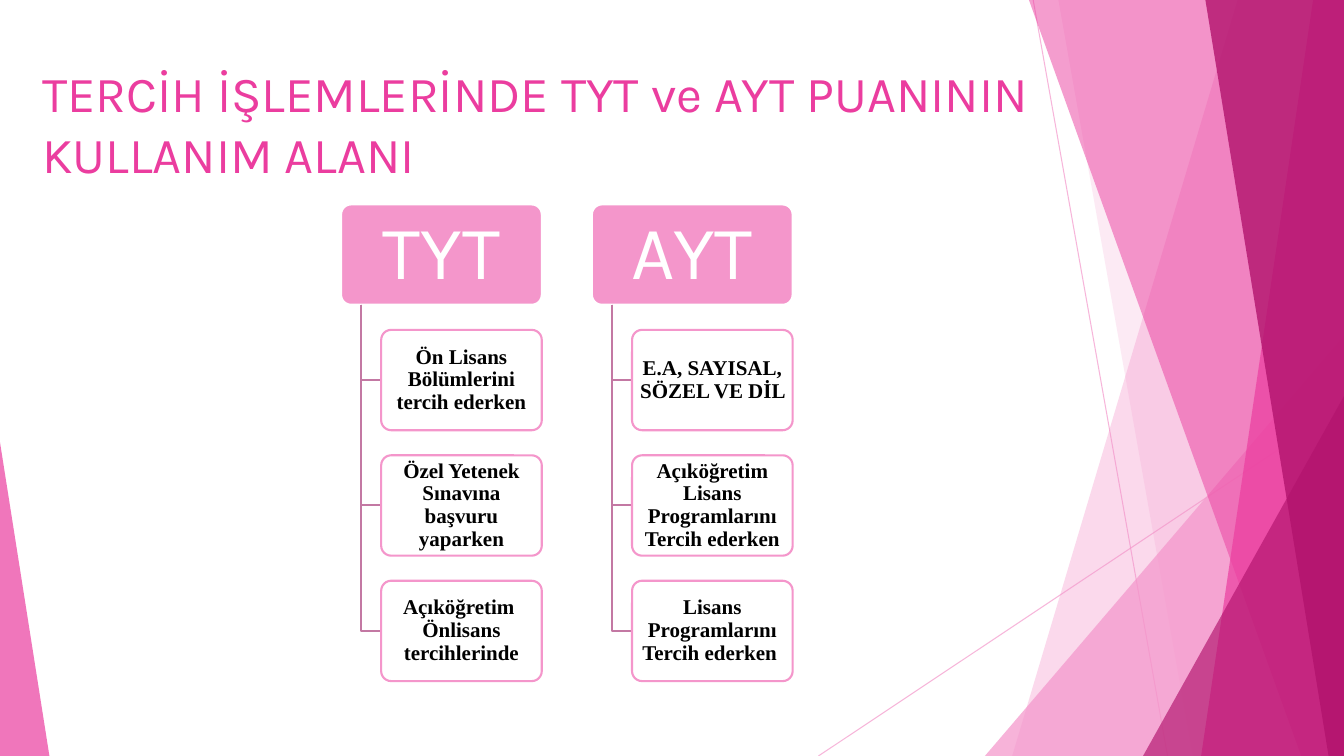
from pptx import Presentation
from pptx import util as u
from pptx.dml.color import RGBColor
from pptx.enum import shapes, text
from pptx.oxml import ns, xmlchemy

PINK, MAGENTA, PLUM, MAUVE = "F496CB", "EB3D9F", "B2136D", "C378A3"
WHITE, BLACK = "FFFFFF", "000000"

COLUMNS = {
    "TYT": [
        "Ön Lisans Bölümlerini tercih ederken",
        "Özel Yetenek Sınavına başvuru yaparken",
        "Açıköğretim  Önlisans tercihlerinde",
    ],
    "AYT": [
        "E.A, SAYISAL, SÖZEL VE DİL ",
        "Açıköğretim Lisans Programlarını Tercih ederken",
        "Lisans Programlarını Tercih ederken ",
    ],
}


def paint(fill, colour):
    fill.solid()
    fill.fore_color.rgb = RGBColor.from_string(colour)


def fade(shape, percent):
    colour = shape._element.spPr.find(".//" + ns.qn("a:srgbClr"))
    alpha = xmlchemy.OxmlElement("a:alpha")
    alpha.set("val", str(percent * 1000))
    colour.append(alpha)


def style_text(frame, font, size, colour, bold=False):
    for para in frame.paragraphs:
        for span in para.runs:
            span.font.name = font
            span.font.size = u.Pt(size)
            span.font.bold = bold
            span.font.color.rgb = RGBColor.from_string(colour)


def add_outline(page, points, close):
    start, *rest = [(u.Pt(x), u.Pt(y)) for x, y in points]
    builder = page.shapes.build_freeform(*start)
    builder.add_line_segments(rest, close=close)
    shape = builder.convert_to_shape()
    shape.shadow.inherit = False
    return shape


def add_ray(page, start, end):
    ray = page.shapes.add_connector(
        shapes.MSO_CONNECTOR.STRAIGHT, *[u.Pt(value) for value in (*start, *end)])
    paint(ray.line.fill, PINK)
    ray.line.width = u.Pt(0.75)
    fade(ray, 70)
    ray._element.spPr.append(xmlchemy.OxmlElement("a:effectLst"))


def add_panel(page, box, top_x, bottom_x, colour, opacity):
    left, top, width, height = box
    right, bottom = left + width, top + height
    corners = [(left + top_x, top), (right, top), (right, bottom), (left + bottom_x, bottom)]
    panel = add_outline(page, corners, True)
    paint(panel.fill, colour)
    panel.line.fill.background()
    fade(panel, opacity)


def add_wedge(page, box, apex, colour, opacity):
    wedge = page.shapes.add_shape(
        shapes.MSO_SHAPE.ISOSCELES_TRIANGLE, *[u.Pt(value) for value in box])
    wedge.adjustments[0] = apex
    wedge.shadow.inherit = False
    paint(wedge.fill, colour)
    wedge.line.fill.background()
    fade(wedge, opacity)


def add_backdrop(page, box):
    left, top, width, height = box
    right, bottom = left + width, top + height
    add_ray(page, (left + 738, top), (left + 834, bottom))
    add_ray(page, (right, top + 290), (left + 584.6, bottom))
    add_panel(page, box, 884, 723, PINK, 36)
    add_panel(page, box, 756, 852, PINK, 20)
    add_wedge(page, (right - 256.5, bottom - 300, 256.5, 300), 1, PINK, 72)
    add_panel(page, box, 735, 929.5, MAGENTA, 50)
    add_panel(page, box, 938, 858, MAGENTA, 70)
    add_panel(page, box, 861, 949, PLUM, 80)
    add_wedge(page, (right - 143.5, bottom - 257, 143.5, 257), 1, PLUM, 66)
    add_wedge(page, (left, bottom - 224, 35.3, 224), 0, MAGENTA, 70)


def place_title(page, box, wording):
    title = page.shapes.title
    title.left, title.top, title.width, title.height = [u.Pt(value) for value in box]
    frame = title.text_frame
    frame.text = wording
    frame.auto_size = text.MSO_AUTO_SIZE.NONE
    frame.vertical_anchor = text.MSO_ANCHOR.TOP
    frame.paragraphs[0].alignment = text.PP_ALIGN.LEFT
    style_text(frame, "Karla", 36, MAGENTA)


def add_card(page, box, wording, fill, line, inset):
    card = page.shapes.add_shape(
        shapes.MSO_SHAPE.ROUNDED_RECTANGLE, *[u.Pt(value) for value in box])
    card.adjustments[0] = 0.1
    card.shadow.inherit = False
    paint(card.fill, fill)
    paint(card.line.fill, line)
    card.line.width = u.Pt(1.5)
    frame = card.text_frame
    frame.text = wording
    frame.word_wrap = True
    frame.vertical_anchor = text.MSO_ANCHOR.MIDDLE
    frame.margin_left = frame.margin_right = u.Pt(inset)
    frame.margin_top = frame.margin_bottom = u.Pt(inset * 0.65)
    frame.paragraphs[0].alignment = text.PP_ALIGN.CENTER
    frame.paragraphs[0].line_spacing = 0.9
    return card


def add_column(page, box, heading, items):
    left, top, width, height = box
    card_height = height / (1 + 1.25 * len(items))
    step = card_height * 1.25
    indent = width * 0.2
    trunk = left + width * 0.1
    head = add_card(page, (left, top, width, card_height), heading, PINK, WHITE, 8)
    style_text(head.text_frame, "Karla", 54, WHITE)
    for row, item in enumerate(items, 1):
        card_top = top + row * step
        middle = card_top + card_height / 2
        elbow = add_outline(
            page, [(trunk, top + card_height), (trunk, middle), (left + indent, middle)], False)
        elbow.fill.background()
        paint(elbow.line.fill, MAUVE)
        elbow.line.width = u.Pt(1.5)
        card = add_card(
            page, (left + indent, card_top, width * 0.8, card_height), item, WHITE, PINK, 2)
        fade(card, 90)
        style_text(card.text_frame, "Times New Roman", 15, BLACK, True)


def main():
    deck = Presentation()
    deck.slide_width, deck.slide_height = u.Pt(960), u.Pt(540)
    page = deck.slides.add_slide(deck.slide_layouts[5])
    add_backdrop(page, (0, 0, 960, 540))
    place_title(page, (23, 41, 854.6, 103.7), "TERCİH İŞLEMLERİNDE TYT ve AYT PUANININ KULLANIM ALANI")
    for index, (heading, items) in enumerate(COLUMNS.items()):
        add_column(page, (243.6 + index * 179.2, 146, 143.4, 340.5), heading, items)
    deck.save("out.pptx")


if __name__ == "__main__":
    main()
